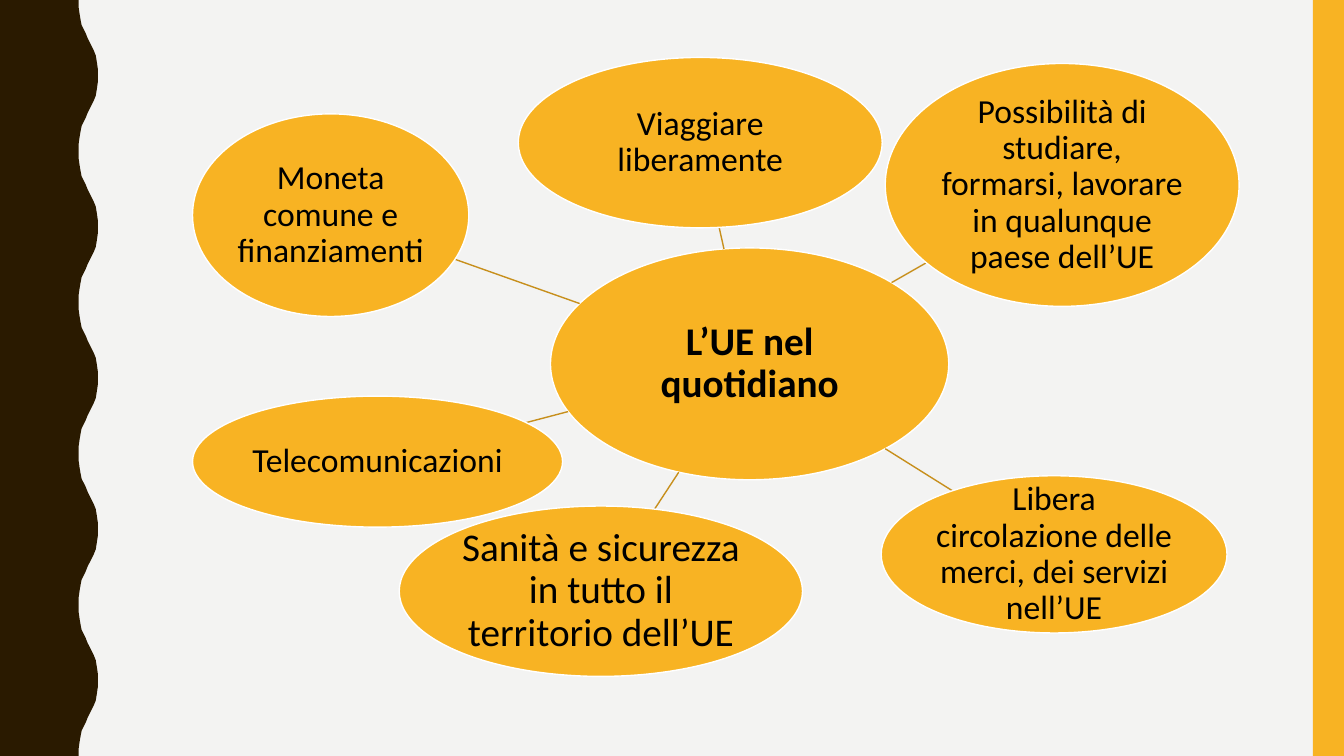
from dataclasses import dataclass
from math import hypot

from lxml import etree
from pptx import Presentation
from pptx import util as u
from pptx.dml.color import RGBColor
from pptx.enum import shapes, text
from pptx.oxml.ns import qn


@dataclass(frozen=True)
class Theme:
    paper: str = "F3F3F2"
    dark: str = "2A1A00"
    amber: str = "F8B323"
    spoke: str = "C78F1C"
    outline: str = "FFFFFF"
    ink: str = "000000"
    font: str = "Calibri"
    large: int = 28
    normal: int = 24


THEME = Theme()
WIDTH, HEIGHT = 13.33, 7.5

# Left edge: half a wave, mirrored and repeated down the slide
WAVE_PERIOD = 1.5
HALF_WAVE = [
    (0.78, 0), (0.78, 0.07), (0.79, 0.14), (0.8, 0.2), (0.81, 0.25),
    (0.83, 0.29), (0.85, 0.33), (0.87, 0.38), (0.89, 0.42), (0.91, 0.46),
    (0.93, 0.5), (0.95, 0.55), (0.96, 0.61), (0.97, 0.68), (0.97, 0.75),
]

# Bubbles: wording, (left, top, width, height), type size
HUB = ("L’UE nel quotidiano", (5.46, 2.46, 3.95, 2.3), THEME.large)
TOPICS = [
    ("Viaggiare liberamente", (5.14, 0.57, 3.61, 1.69), THEME.normal),
    ("Possibilità di studiare, formarsi, lavorare in qualunque paese dell’UE",
     (8.78, 0.63, 3.51, 2.41), THEME.normal),
    ("Libera circolazione delle merci, dei servizi nell’UE",
     (8.74, 4.72, 3.43, 1.56), THEME.normal),
    ("Sanità e sicurezza in tutto il territorio dell’UE",
     (3.96, 5.02, 4, 1.69), THEME.large),
    ("Telecomunicazioni", (1.91, 3.93, 3.67, 1.3), THEME.normal),
    ("Moneta comune e finanziamenti", (1.91, 1.13, 2.74, 2.01), THEME.normal),
]


def color(value):
    return RGBColor.from_string(value)


def paint(shape, fill, line=None):
    shape.shadow.inherit = False
    shape.fill.solid()
    shape.fill.fore_color.rgb = color(fill)
    if line:
        shape.line.color.rgb = color(line)
        shape.line.width = u.Pt(1)
    else:
        shape.line.fill.background()


def write(shape, wording, *, size, bold=False):
    frame = shape.text_frame
    frame.word_wrap = True
    frame.vertical_anchor = text.MSO_ANCHOR.MIDDLE
    frame.margin_left = frame.margin_right = u.Inches(0.02)
    frame.margin_top = frame.margin_bottom = u.Inches(0.02)
    para = frame.paragraphs[0]
    para.alignment = text.PP_ALIGN.CENTER
    para.line_spacing = 0.9
    span = para.add_run()
    span.text = wording
    span.font.name = THEME.font
    span.font.size = u.Pt(size)
    span.font.bold = bold
    span.font.color.rgb = color(THEME.ink)


def add_wave(page):
    mirrored = [(x, WAVE_PERIOD - y) for x, y in reversed(HALF_WAVE[:-1])]
    wave = HALF_WAVE + mirrored
    edge = [(x, y + n * WAVE_PERIOD)
            for n in range(round(HEIGHT / WAVE_PERIOD)) for x, y in wave]
    points = [(u.Inches(x), u.Inches(y)) for x, y in edge + [(0, HEIGHT)]]
    builder = page.shapes.build_freeform(0, 0)
    builder.add_line_segments(points, close=True)
    paint(builder.convert_to_shape(), THEME.dark)


def add_band(page):
    band = page.shapes.add_shape(
        shapes.MSO_SHAPE.RECTANGLE, u.Inches(13.02), 0,
        u.Inches(WIDTH - 13.02), u.Inches(HEIGHT))
    paint(band, THEME.amber)


def add_bubble(page, wording, place, size, bold=False):
    bubble = page.shapes.add_shape(
        shapes.MSO_SHAPE.OVAL, *(u.Inches(length) for length in place))
    paint(bubble, THEME.amber, THEME.outline)
    write(bubble, wording, size=size, bold=bold)


def center(place):
    left, top, width, height = place
    return left + width / 2, top + height / 2


def rim_point(place, target):
    """Point where the ray from an ellipse's centre to target leaves it."""
    x, y = center(place)
    dx, dy = target[0] - x, target[1] - y
    reach = 1 / hypot(dx / (place[2] / 2), dy / (place[3] / 2))
    return x + dx * reach, y + dy * reach


def add_spoke(page, hub, topic):
    ends = rim_point(hub, center(topic)) + rim_point(topic, center(hub))
    spoke = page.shapes.add_connector(
        shapes.MSO_CONNECTOR.STRAIGHT, *(u.Inches(value) for value in ends))
    spoke.line.color.rgb = color(THEME.spoke)
    spoke.line.width = u.Pt(1)
    etree.SubElement(spoke.element.spPr, qn("a:effectLst"))


def main():
    deck = Presentation()
    deck.slide_width, deck.slide_height = u.Inches(WIDTH), u.Inches(HEIGHT)
    page = deck.slides.add_slide(deck.slide_layouts[6])

    # Background and side decoration
    page.background.fill.solid()
    page.background.fill.fore_color.rgb = color(THEME.paper)
    add_wave(page)
    add_band(page)

    # Radial diagram
    add_bubble(page, *HUB, bold=True)
    for topic in TOPICS:
        add_spoke(page, HUB[1], topic[1])
        add_bubble(page, *topic)

    deck.save("out.pptx")


if __name__ == "__main__":
    main()
